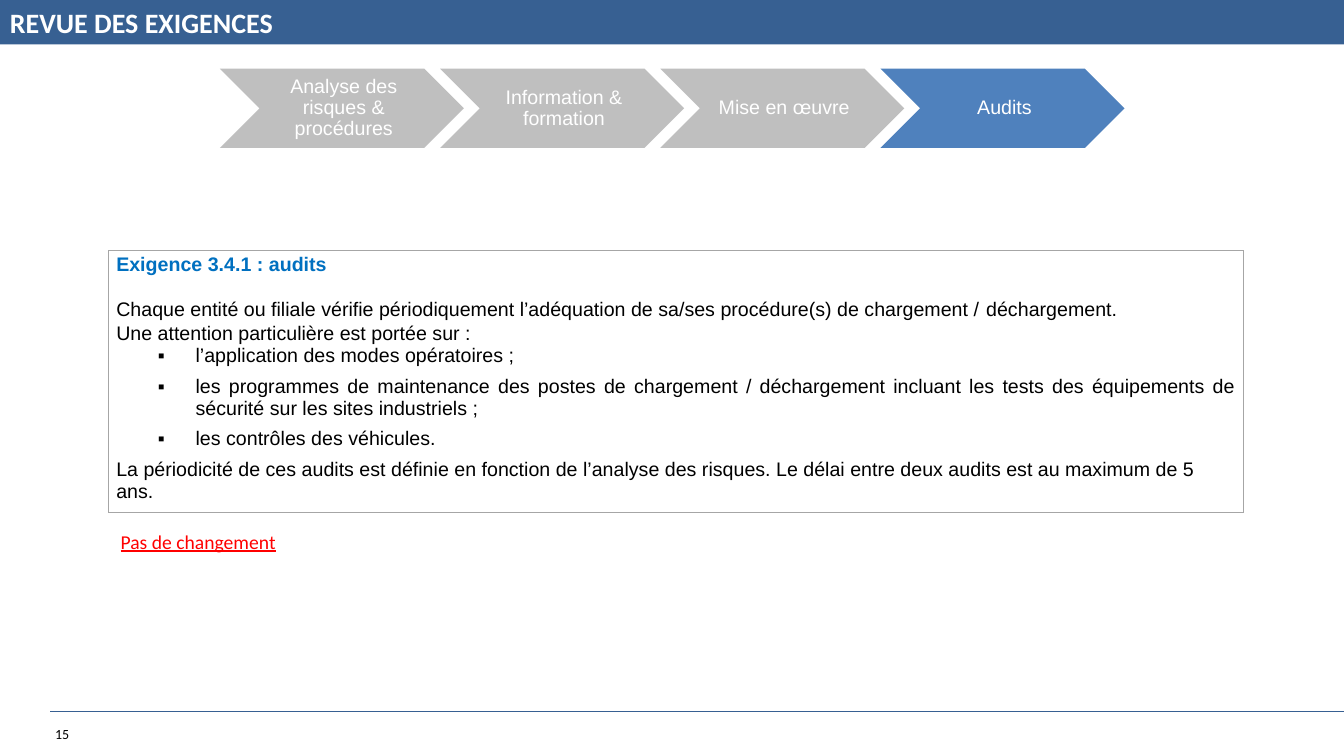
from lxml import etree
from pptx import Presentation
from pptx import util as u
from pptx.dml.color import RGBColor
from pptx.enum import shapes, text
from pptx.oxml.ns import qn

NAVY, BLUE, GREY, BORDER = "376092", "4F81BD", "BFBFBF", "A6A6A6"
WHITE, BLACK, RED, HEADING_BLUE = "FFFFFF", "000000", "FF0000", "0070C0"

TITLE = "REVUE DES EXIGENCES"
PAGE_NUMBER = "15"
REMARK = "Pas de changement"
STEPS = ["Analyse des risques & procédures", "Information & formation",
         "Mise en œuvre", "Audits"]
CURRENT_STEP = "Audits"
REQUIREMENT = "Exigence 3.4.1 : audits"
INTRODUCTION = [
    "Chaque entité ou filiale vérifie périodiquement l’adéquation de sa/ses "
    "procédure(s) de chargement /",
    "déchargement.",
]
ATTENTION = "Une attention particulière est portée sur :"
CHECKS = [
    "l’application des modes opératoires ;",
    "les programmes de maintenance des postes de chargement / déchargement incluant "
    "les tests des équipements de sécurité sur les sites industriels ;",
    "les contrôles des véhicules.",
]
PERIOD = ("La périodicité de ces audits est définie en fonction de l’analyse des "
          "risques. Le délai entre deux audits est au maximum de 5 ans.")

SLIDE_WIDTH, SLIDE_HEIGHT = 33.87, 19.05
HEADER_HEIGHT = 1.12
STEP_LEFT, STEP_TOP, STEP_WIDTH, STEP_HEIGHT, STEP_PITCH = 5.54, 1.73, 6.15, 2, 5.55
ROW_HEIGHTS = [1.04, 5.44]
ROW_EDGES = ["LRT", "LRB"]


def rgb(value):
    return RGBColor.from_string(value)


def box(left, top, width, height):
    return [u.Cm(length) for length in (left, top, width, height)]


def add_run(paragraph, words, size=14, font="Arial", color=BLACK, bold=False,
            underline=False):
    run = paragraph.add_run()
    run.text = words
    run.font.size, run.font.name = u.Pt(size), font
    run.font.bold, run.font.underline = bold, underline
    run.font.color.rgb = rgb(color)


def add_shape(kind, place, color):
    shape = slide.shapes.add_shape(kind, *box(*place))
    shape.shadow.inherit = False
    shape.fill.solid()
    shape.fill.fore_color.rgb = rgb(color)
    shape.line.fill.background()
    return shape


def add_label(place, words, **style):
    frame = slide.shapes.add_textbox(*box(*place)).text_frame
    frame.word_wrap = True
    frame.vertical_anchor = text.MSO_ANCHOR.MIDDLE
    add_run(frame.paragraphs[0], words, **style)


def add_bullet(paragraph):
    properties = paragraph._p.get_or_add_pPr()
    properties.set("marL", str(u.Cm(2)))
    properties.set("indent", str(u.Cm(-0.95)))
    etree.SubElement(properties, qn("a:buFont"), typeface="Arial")
    etree.SubElement(properties, qn("a:buChar"), char="▪")


def style_cell(cell, edges):
    """Draw the named edges (L, R, T, B), hide the others, clear the fill."""
    properties = cell._tc.get_or_add_tcPr()
    for edge in "LRTB":
        line = etree.SubElement(properties, qn("a:ln" + edge), w=str(u.Pt(1)))
        if edge in edges:
            fill = etree.SubElement(line, qn("a:solidFill"))
            etree.SubElement(fill, qn("a:srgbClr"), val=BORDER)
        else:
            etree.SubElement(line, qn("a:noFill"))
    cell.fill.background()
    cell.margin_left = cell.margin_right = u.Cm(0.19)
    cell.margin_top = cell.margin_bottom = 0


def add_steps():
    for index, step in enumerate(STEPS):
        place = (STEP_LEFT + index * STEP_PITCH, STEP_TOP, STEP_WIDTH, STEP_HEIGHT)
        color = BLUE if step == CURRENT_STEP else GREY
        frame = add_shape(shapes.MSO_SHAPE.CHEVRON, place, color).text_frame
        frame.word_wrap = True
        frame.vertical_anchor = text.MSO_ANCHOR.MIDDLE
        frame.margin_left = u.Cm(0.15)
        frame.margin_right = frame.margin_top = frame.margin_bottom = u.Cm(0.05)
        paragraph = frame.paragraphs[0]
        paragraph.alignment = text.PP_ALIGN.CENTER
        paragraph.line_spacing = 0.9
        add_run(paragraph, step, color=WHITE)


def add_requirement():
    place = box(2.74, 6.32, 28.6, sum(ROW_HEIGHTS))
    table = slide.shapes.add_table(len(ROW_HEIGHTS), 1, *place).table
    table.first_row = table.horz_banding = False
    for row, height, edges in zip(table.rows, ROW_HEIGHTS, ROW_EDGES):
        row.height = u.Cm(height)
        style_cell(row.cells[0], edges)

    heading = table.cell(0, 0).text_frame.paragraphs[0]
    heading.alignment = text.PP_ALIGN.JUSTIFY
    heading.line_spacing = 1.15
    heading.space_after = u.Pt(3)
    add_run(heading, REQUIREMENT, color=HEADING_BLUE, bold=True)

    frame = table.cell(1, 0).text_frame
    introduction = frame.paragraphs[0]
    add_run(introduction, INTRODUCTION[0])
    add_run(introduction, " ", size=18, font="Calibri")
    add_run(introduction, INTRODUCTION[1])
    add_run(frame.add_paragraph(), ATTENTION)
    for check in CHECKS:
        paragraph = frame.add_paragraph()
        paragraph.alignment = text.PP_ALIGN.JUSTIFY
        paragraph.space_after = u.Pt(6)
        add_bullet(paragraph)
        add_run(paragraph, check)
    add_run(frame.add_paragraph(), PERIOD)


def add_footer():
    start, end, height = u.Cm(1.27), u.Cm(SLIDE_WIDTH), u.Cm(17.93)
    rule = slide.shapes.add_connector(shapes.MSO_CONNECTOR.STRAIGHT,
                                      start, height, end, height)
    rule.line.color.rgb = rgb(NAVY)
    rule.line.width = u.Pt(0.75)
    etree.SubElement(rule._element.spPr, qn("a:effectLst"))
    add_label((1.14, 18.14, 1.8, 0.69), PAGE_NUMBER, size=10, font="Calibri")


presentation = Presentation()
presentation.slide_width = u.Cm(SLIDE_WIDTH)
presentation.slide_height = u.Cm(SLIDE_HEIGHT)
slide = presentation.slides.add_slide(presentation.slide_layouts[6])

add_footer()
add_shape(shapes.MSO_SHAPE.RECTANGLE, (0, 0, SLIDE_WIDTH, HEADER_HEIGHT), NAVY)
add_label((0, 0, 17.53, HEADER_HEIGHT), TITLE, size=20, font="Calibri",
          color=WHITE, bold=True)
add_requirement()
add_label((2.79, 13.21, 14.33, 0.86), REMARK, font="Calibri", color=RED,
          underline=True)
add_steps()
presentation.save("out.pptx")
